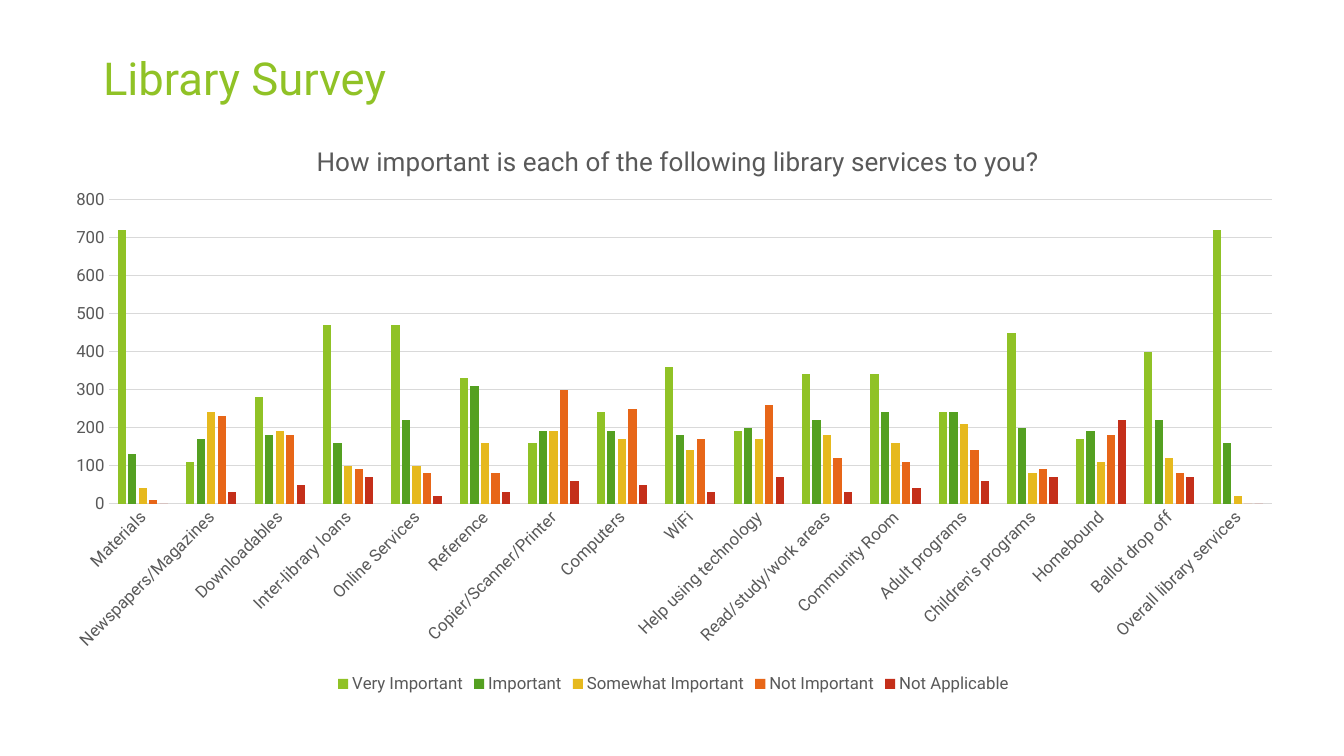
from lxml.etree import SubElement
from pptx import Presentation
from pptx.chart.data import CategoryChartData
from pptx.dml.color import RGBColor
from pptx.enum.chart import XL_CHART_TYPE as ChartType, XL_LEGEND_POSITION as LegendPos, XL_TICK_MARK as Tick
from pptx.enum.text import MSO_ANCHOR as Anchor, MSO_AUTO_SIZE as AutoSize, PP_ALIGN as Align
from pptx.oxml.ns import qn
from pptx.util import Pt

PX = 914400 / 100.8
FONT = "Roboto"
COLORS = {
    "title": "90C226", "text": "595959", "grid": "D9D9D9",
    "Very Important": "90C226", "Important": "54A021",
    "Somewhat Important": "E6B91E", "Not Important": "E76618",
    "Not Applicable": "C42F1A",
}
SERVICES = [
    "Materials", "Newspapers/Magazines", "Downloadables", "Inter-library loans",
    "Online Services", "Reference", "Copier/Scanner/Printer", "Computers", "WiFi",
    "Help using technology", "Read/study/work areas", "Community Room",
    "Adult programs", "Children's programs", "Homebound", "Ballot drop off",
    "Overall library services",
]
ANSWERS = {
    "Very Important": [720, 110, 280, 470, 470, 330, 160, 240, 360, 190, 340, 340, 240, 450, 170, 400, 720],
    "Important": [130, 170, 180, 160, 220, 310, 190, 190, 180, 200, 220, 240, 240, 200, 190, 220, 160],
    "Somewhat Important": [40, 240, 190, 100, 100, 160, 190, 170, 140, 170, 180, 160, 210, 80, 110, 120, 20],
    "Not Important": [10, 230, 180, 90, 80, 80, 300, 250, 170, 260, 120, 110, 140, 90, 180, 80, 0],
    "Not Applicable": [0, 30, 50, 70, 20, 30, 60, 50, 30, 70, 30, 40, 60, 70, 220, 70, 0],
}


def style(font, size, color):
    font.name = FONT
    font.size = Pt(size)
    font.bold = False
    font.color.rgb = RGBColor.from_string(COLORS[color])


def set_layout(parent, **settings):
    layout = parent.find(qn("c:layout"))
    if layout is None:
        layout = SubElement(parent, qn("c:layout"))
        parent.remove(layout)
        parent.insert(1 if parent.find(qn("c:tx")) is not None else 0, layout)
    for child in list(layout):
        layout.remove(child)
    manual = SubElement(layout, qn("c:manualLayout"))
    for tag, val in settings.items():
        SubElement(manual, qn(f"c:{tag}")).set("val", str(val))


prs = Presentation()
prs.slide_width, prs.slide_height = round(1344 * PX), round(756 * PX)
s = prs.slides.add_slide(prs.slide_layouts[5])

title = s.shapes.title
title.left, title.top, title.width, title.height = [round(v * PX) for v in (93, 40, 1159, 58)]
tf = title.text_frame
tf.auto_size = AutoSize.NONE
tf.vertical_anchor = Anchor.TOP
tf.margin_top = round(10 * PX)
p = tf.paragraphs[0]
p.alignment = Align.LEFT
r = p.add_run()
r.text = "Library Survey"
style(r.font, 32.4, "title")

data = CategoryChartData()
data.categories = SERVICES
for name, values in ANSWERS.items():
    data.add_series(name, values)
box = [round(v * PX) for v in (50, 116, 1247, 582)]
chart = s.shapes.add_chart(ChartType.COLUMN_CLUSTERED, *box, data).chart
chart.font.name = FONT
chart.font.size = Pt(10)

chart.has_title = True
p = chart.chart_title.text_frame.paragraphs[0]
r = p.add_run()
r.text = "How important is each of the following library services to you?"
style(r.font, 18.6, "text")
set_layout(chart.chart_title._element, xMode="edge", yMode="edge", x=0.21, y=0.04)

plot = chart.plots[0]
plot.gap_width = 219
plot.overlap = -27
plot.vary_by_categories = False
for series in plot.series:
    series.invert_if_negative = False
    series.format.fill.solid()
    series.format.fill.fore_color.rgb = RGBColor.from_string(COLORS[series.name])
set_layout(chart._chartSpace.chart.plotArea, layoutTarget="inner", xMode="edge", yMode="edge",
           x=0.047, y=0.144, w=0.933, h=0.522)

cat_axis, val_axis = chart.category_axis, chart.value_axis
for axis in (cat_axis, val_axis):
    axis.major_tick_mark = axis.minor_tick_mark = Tick.NONE
    style(axis.tick_labels.font, 12, "text")
val_axis.minimum_scale, val_axis.maximum_scale, val_axis.major_unit = 0, 800, 100
val_axis.format.line.fill.background()
for line in (cat_axis.format.line, val_axis.major_gridlines.format.line):
    line.color.rgb = RGBColor.from_string(COLORS["grid"])
    line.width = Pt(0.75)
cat_axis._element.find(qn("c:txPr")).find(qn("a:bodyPr")).set("rot", "-2700000")

chart.has_legend = True
chart.legend.position = LegendPos.BOTTOM
chart.legend.include_in_layout = False
style(chart.legend.font, 12, "text")

prs.save("out.pptx")
